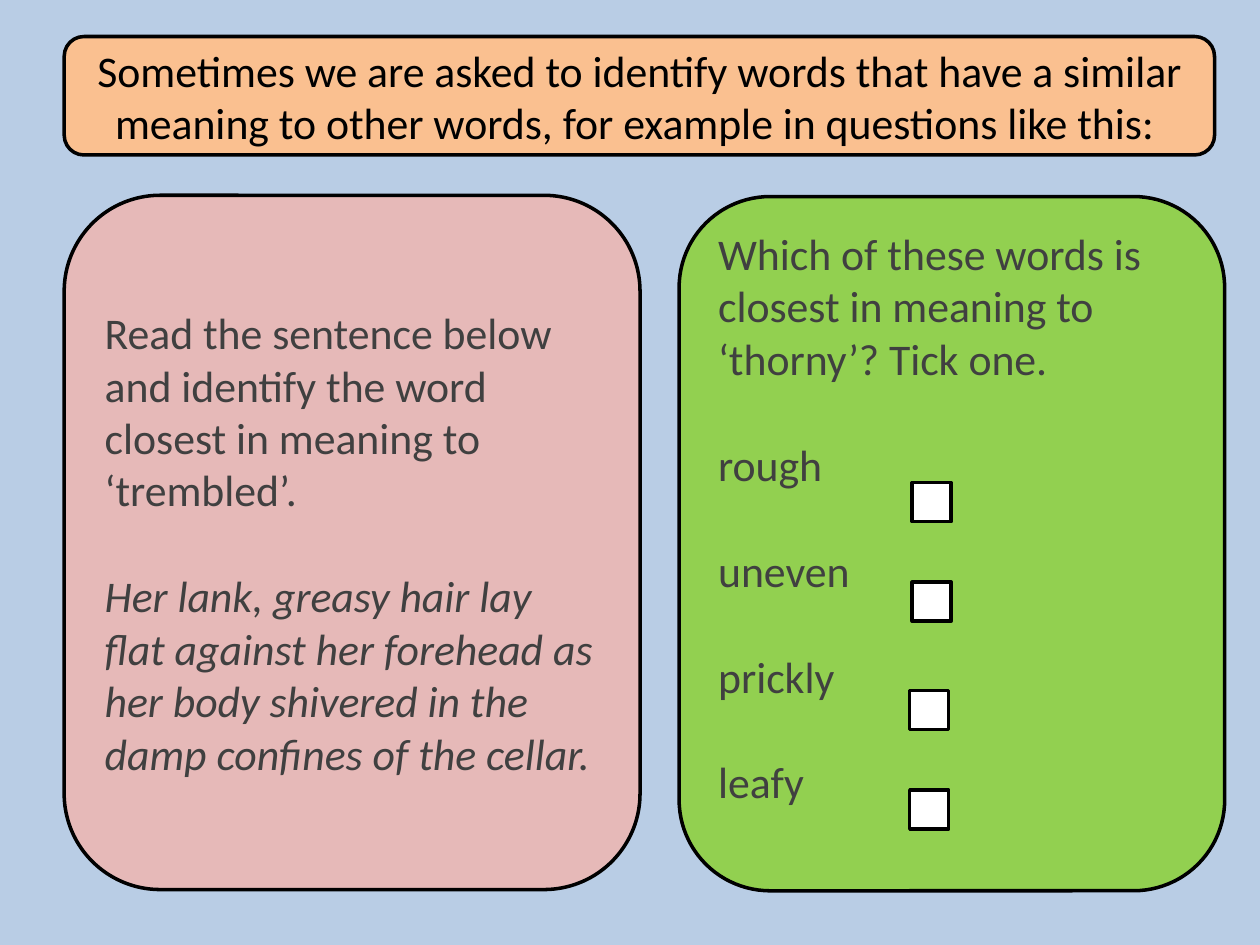
from dataclasses import dataclass

from pptx import Presentation
from pptx.dml.color import RGBColor
from pptx.enum.shapes import MSO_SHAPE
from pptx.enum.text import MSO_ANCHOR, PP_ALIGN
from pptx.shapes.autoshape import Shape
from pptx.slide import Slide
from pptx.util import Inches, Pt

SKY = RGBColor(0xB9, 0xCD, 0xE5)
PEACH = RGBColor(0xFA, 0xC0, 0x90)
PINK = RGBColor(0xE6, 0xB9, 0xB8)
GREEN = RGBColor(0x92, 0xD0, 0x50)
WHITE = RGBColor(0xFF, 0xFF, 0xFF)
BLACK = RGBColor(0x00, 0x00, 0x00)
CHARCOAL = RGBColor(0x40, 0x40, 0x40)

FONT, TEXT_SIZE = "Calibri", Pt(25)
BLANK_LINE = Pt(30.5)

# Layout in inches
LEFT_COLUMN, RIGHT_COLUMN = 0.51, 5.39
PANEL_HEIGHT = 5.51
TICK_SIZE = 0.31


@dataclass(frozen=True)
class Box:
    left: float
    top: float
    width: float
    height: float
    fill: RGBColor


@dataclass(frozen=True)
class Line:
    text: str
    italic: bool = False


@dataclass(frozen=True)
class Panel:
    box: Box
    lines: tuple[Line, ...]
    color: RGBColor = CHARCOAL
    align: PP_ALIGN = PP_ALIGN.LEFT
    margin_top: float = 0.05
    margin_bottom: float = 0.05


@dataclass(frozen=True)
class Option:
    word: str
    tick_left: float
    tick_top: float


OPTIONS = (
    Option("rough", 7.24, 3.83),
    Option("uneven", 7.24, 4.62),
    Option("prickly", 7.22, 5.48),
    Option("leafy", 7.22, 6.27),
)

PANELS = (
    Panel(
        Box(LEFT_COLUMN, 0.29, 9.13, 0.94, PEACH),
        (Line("Sometimes we are asked to identify words that have a similar "
              "meaning to other words, for example in questions like this: "),),
        color=BLACK, align=PP_ALIGN.CENTER, margin_top=0, margin_bottom=0,
    ),
    Panel(
        Box(LEFT_COLUMN, 1.55, 4.57, PANEL_HEIGHT, PINK),
        (Line("Read the sentence below and identify the word closest in "
              "meaning to ‘trembled’."),
         Line("Her lank, greasy hair lay flat against her forehead as her "
              "body shivered in the damp confines of the cellar.", italic=True)),
    ),
    Panel(
        Box(RIGHT_COLUMN, 1.56, 4.33, PANEL_HEIGHT, GREEN),
        (Line("Which of these words is closest in meaning to ‘thorny’? "
              "Tick one."),
         *(Line(option.word) for option in OPTIONS)),
        margin_bottom=0.47,
    ),
)


def draw_box(slide: Slide, box: Box, outline: MSO_SHAPE) -> Shape:
    shape = slide.shapes.add_shape(
        outline, Inches(box.left), Inches(box.top),
        Inches(box.width), Inches(box.height))
    shape.shadow.inherit = False
    shape.fill.solid()
    shape.fill.fore_color.rgb = box.fill
    shape.line.color.rgb = BLACK
    shape.line.width = Pt(2)
    return shape


def draw_panel(slide: Slide, panel: Panel) -> None:
    frame = draw_box(slide, panel.box, MSO_SHAPE.ROUNDED_RECTANGLE).text_frame
    frame.word_wrap = True
    frame.vertical_anchor = MSO_ANCHOR.MIDDLE
    frame.margin_top = Inches(panel.margin_top)
    frame.margin_bottom = Inches(panel.margin_bottom)
    for index, line in enumerate(panel.lines):
        paragraph = frame.add_paragraph() if index else frame.paragraphs[0]
        paragraph.text = line.text
        paragraph.alignment = panel.align
        paragraph.space_before = BLANK_LINE if index else Pt(0)
        paragraph.font.name = FONT
        paragraph.font.size = TEXT_SIZE
        paragraph.font.italic = line.italic
        paragraph.font.color.rgb = panel.color


def main() -> None:
    deck = Presentation()
    deck.slide_width, deck.slide_height = Inches(10), Inches(7.5)
    slide = deck.slides.add_slide(deck.slide_layouts.get_by_name("Blank"))
    slide.background.fill.solid()
    slide.background.fill.fore_color.rgb = SKY

    # Instruction banner and the two question panels
    for panel in PANELS:
        draw_panel(slide, panel)

    # One tick box per answer option
    for option in OPTIONS:
        tick = Box(option.tick_left, option.tick_top, TICK_SIZE, TICK_SIZE, WHITE)
        draw_box(slide, tick, MSO_SHAPE.RECTANGLE)

    deck.save("out.pptx")


if __name__ == "__main__":
    main()
